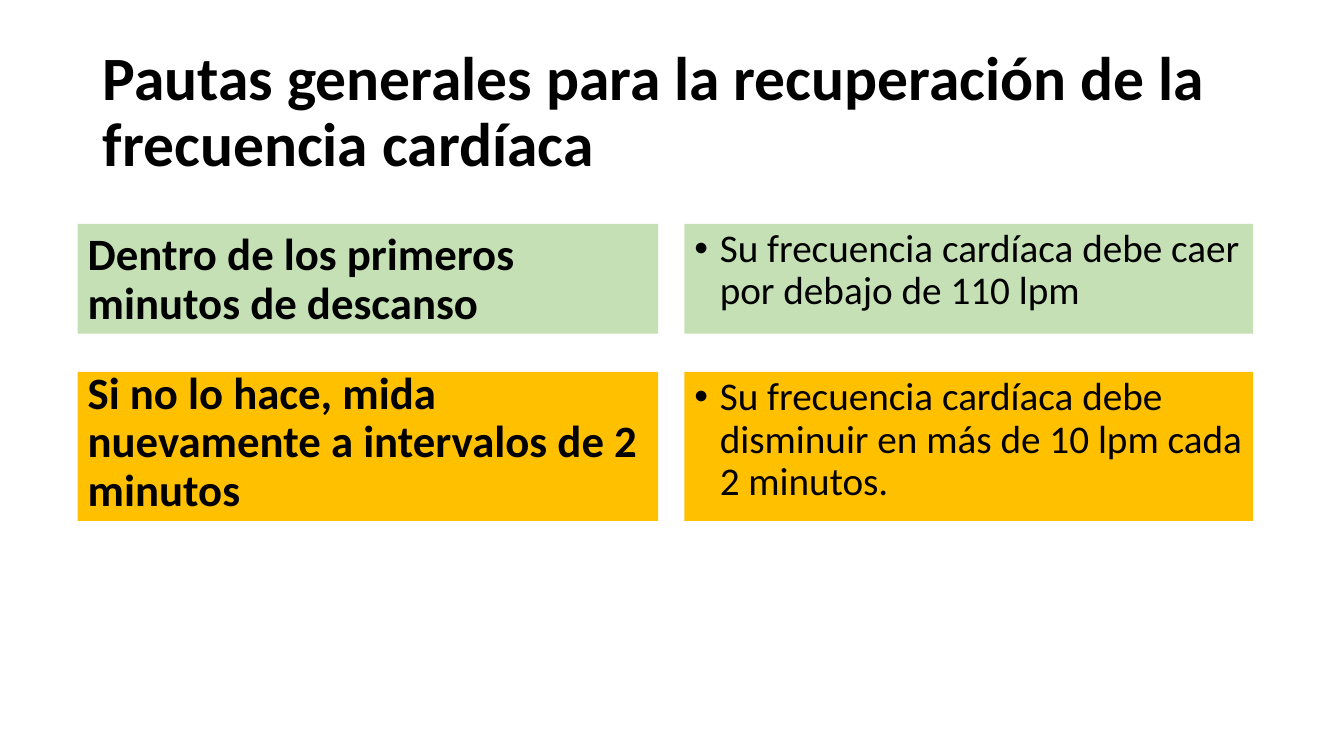
import dataclasses

import pptx
import pptx.dml.color
import pptx.enum.shapes
import pptx.enum.text
import pptx.oxml
import pptx.util
import lxml.etree

Cm = pptx.util.Cm
Pt = pptx.util.Pt
Anchor = pptx.enum.text.MSO_ANCHOR


@dataclasses.dataclass(frozen=True)
class Theme:
    font: str = "Calibri"
    ink: str = "000000"
    green: str = "C5E0B4"
    amber: str = "FFC000"
    title_size: int = 44
    condition_size: int = 32
    target_size: int = 28


def rgb(value):
    return pptx.dml.color.RGBColor.from_string(value)


def set_text(frame, text, *, font, size, color, bold=False,
             anchor=Anchor.TOP, space_before=0, bullet=False):
    frame.word_wrap = True
    frame.vertical_anchor = anchor
    paragraph = frame.paragraphs[0]
    paragraph.alignment = pptx.enum.text.PP_ALIGN.LEFT
    paragraph.line_spacing = 0.9
    paragraph.space_before = Pt(space_before)
    if bullet:
        properties = paragraph._p.get_or_add_pPr()
        indent = Cm(0.64)
        properties.set("marL", str(indent))
        properties.set("indent", str(-indent))
        marker_font = lxml.etree.SubElement(properties, pptx.oxml.ns.qn("a:buFont"))
        marker_font.set("typeface", "Arial")
        marker = lxml.etree.SubElement(properties, pptx.oxml.ns.qn("a:buChar"))
        marker.set("char", "•")
    run = paragraph.add_run()
    run.text = text
    run.font.name = font
    run.font.size = Pt(size)
    run.font.bold = bold
    run.font.color.rgb = rgb(color)


class Deck:
    def __init__(self, theme):
        self.theme = theme
        self.presentation = pptx.Presentation()
        self.presentation.slide_width = Cm(33.87)
        self.presentation.slide_height = Cm(19.05)
        self.slide = self.presentation.slides.add_slide(
            self.presentation.slide_layouts[6])

    def label(self, shape, text, **style):
        set_text(shape.text_frame, text, font=self.theme.font,
                 color=self.theme.ink, **style)

    def title(self, text, left, top, width, height):
        heading = self.slide.shapes.add_textbox(
            Cm(left), Cm(top), Cm(width), Cm(height))
        self.label(heading, text, size=self.theme.title_size, bold=True,
                   anchor=Anchor.MIDDLE)

    def panel(self, text, left, top, width, height, fill, **style):
        panel = self.slide.shapes.add_shape(
            pptx.enum.shapes.MSO_SHAPE.RECTANGLE,
            Cm(left), Cm(top), Cm(width), Cm(height))
        panel.shadow.inherit = False
        panel.fill.solid()
        panel.fill.fore_color.rgb = rgb(fill)
        panel.line.fill.background()
        self.label(panel, text, space_before=10, **style)

    def guideline(self, condition, target, top, height, fill):
        self.panel(condition, 1.96, top, 14.63, height, fill,
                   size=self.theme.condition_size, bold=True,
                   anchor=Anchor.BOTTOM)
        self.panel(target, 17.25, top, 14.33, height, fill,
                   size=self.theme.target_size, bullet=True)


def main():
    theme = Theme()
    deck = Deck(theme)
    deck.title("Pautas generales para la recuperación de la frecuencia cardíaca",
               2.34, 1.02, 29.21, 3.68)
    guidelines = [
        ("Dentro de los primeros minutos de descanso",
         "Su frecuencia cardíaca debe caer por debajo de 110 lpm",
         5.64, 2.77, theme.green),
        ("Si no lo hace, mida nuevamente a intervalos de 2 minutos",
         "Su frecuencia cardíaca debe disminuir en más de 10 lpm cada 2 minutos.",
         9.37, 3.76, theme.amber),
    ]
    for guideline in guidelines:
        deck.guideline(*guideline)
    deck.presentation.save("out.pptx")


if __name__ == "__main__":
    main()
